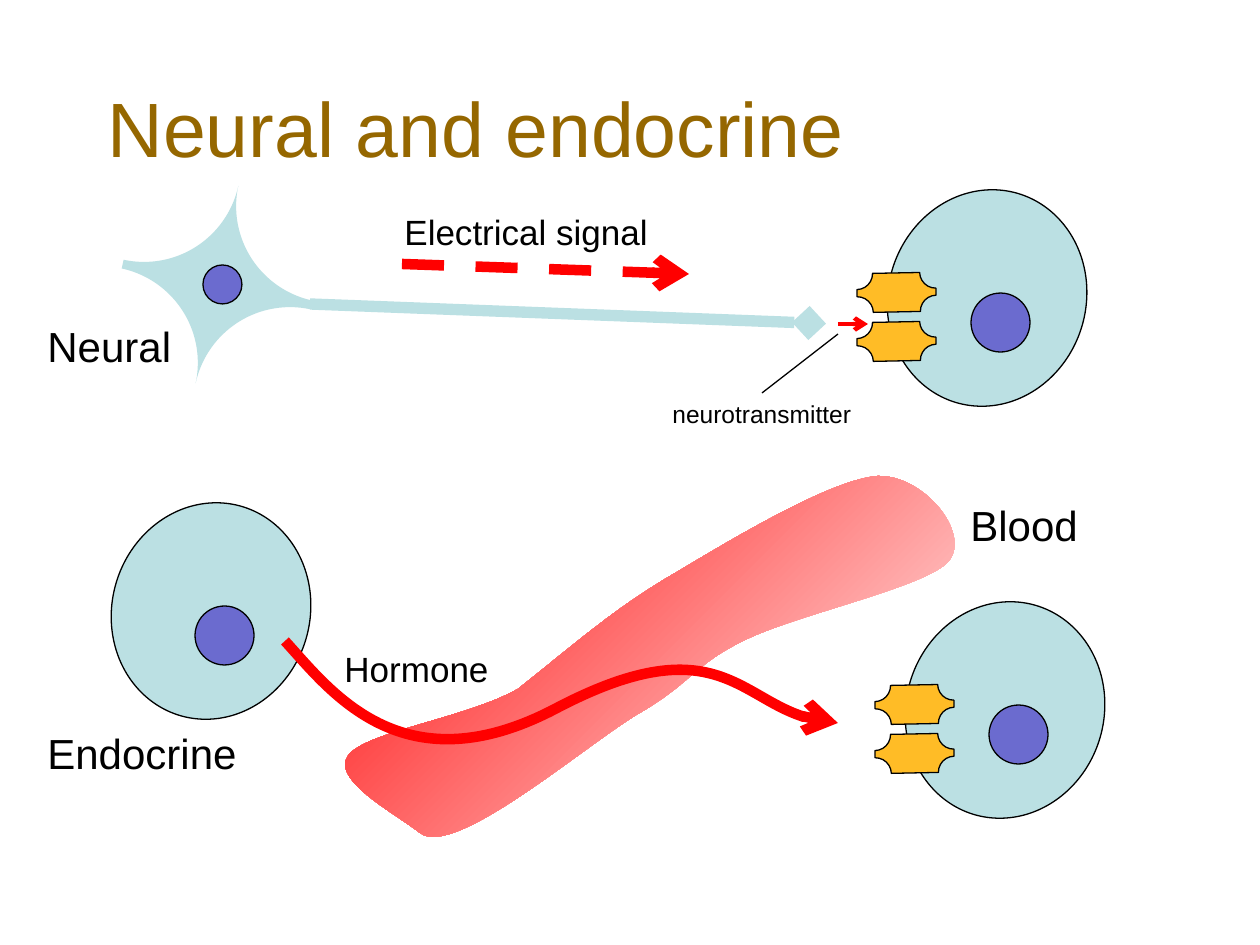
from dataclasses import dataclass

from lxml import etree
from pptx import Presentation
from pptx.dml.color import RGBColor
from pptx.enum import dml, shapes, text
from pptx.oxml import parse_xml
from pptx.oxml.ns import nsdecls, qn
from pptx.util import Pt

EMU_PER_PX = 914400 / 126


@dataclass(frozen=True)
class Theme:
    font: str = "Arial"
    title: str = "956700"
    ink: str = "000000"
    tissue: str = "BBE0E3"
    nucleus: str = "6B6BCF"
    receptor: str = "FFBC26"
    signal: str = "FF0000"
    fade: str = "FFFFFF"
    title_size: int = 44
    heading_size: int = 24
    label_size: int = 20
    note_size: int = 14
    outline: float = 0.75


THEME = Theme()


def px(*lengths):
    return [round(length * EMU_PER_PX) for length in lengths]


def rgb(color):
    return RGBColor.from_string(color)


# Text
def write(frame, words, size, color=THEME.ink):
    para = frame.paragraphs[0]
    span = para.add_run()
    span.text = words
    span.font.name = THEME.font
    span.font.size = Pt(size)
    span.font.color.rgb = rgb(color)
    return para


def add_title(page, words):
    title = page.shapes.title
    title.left, title.top, title.width, title.height = px(95, 53, 1071, 126)
    title.text_frame.vertical_anchor = text.MSO_ANCHOR.BOTTOM
    para = write(title.text_frame, words, THEME.title_size, THEME.title)
    para.alignment = text.PP_ALIGN.LEFT


def add_label(page, words, bounds, size):
    frame = page.shapes.add_textbox(*px(*bounds)).text_frame
    frame.word_wrap = False
    frame.auto_size = text.MSO_AUTO_SIZE.SHAPE_TO_FIT_TEXT
    write(frame, words, size)


# Preset shapes
def add_part(parent, kind, bounds, color, turn=0, corner=None, outlined=True):
    part = parent.shapes.add_shape(kind, *px(*bounds))
    part.shadow.inherit = False
    part.rotation = turn
    if corner is not None:
        part.adjustments[0] = corner
    part.fill.solid()
    part.fill.fore_color.rgb = rgb(color)
    if outlined:
        style_line(part.line, THEME.ink, THEME.outline)
    else:
        part.line.fill.background()


def add_cell(page, left, top, receptors=0):
    cell = page.shapes.add_group_shape()
    oval = shapes.MSO_SHAPE.OVAL
    add_part(cell, oval, (left, top, 218, 198), THEME.tissue, 106.4)
    add_part(cell, oval, (left + 93, top + 94, 59, 59), THEME.nucleus, 106.4)
    for index in range(receptors):
        bounds = (left - 1, top + 54 + 49 * index, 39, 79)
        add_part(cell, shapes.MSO_SHAPE.PLAQUE, bounds, THEME.receptor, 88.9, 0.409)


# Lines and curves
def style_line(line, color, width, dash=None, tail=None):
    line.color.rgb = rgb(color)
    line.width = Pt(width)
    if dash:
        line.dash_style = dash
    if tail:
        etree.SubElement(line._get_or_add_ln(), qn("a:tailEnd"), type=tail)


def add_line(page, start, end, color, width, **style):
    line = page.shapes.add_connector(
        shapes.MSO_CONNECTOR.STRAIGHT, *px(*start, *end))
    etree.SubElement(line.element.spPr, qn("a:effectLst"))
    style_line(line.line, color, width, **style)


def add_curve(page, start, controls, closed=False):
    """Draw cubic curves; every three controls make one segment."""
    builder = page.shapes.build_freeform(*start, scale=EMU_PER_PX)
    builder.add_line_segments(controls, close=closed)
    curve = builder.convert_to_shape()
    curve.shadow.inherit = False
    segments = curve.element.xpath(".//a:lnTo")
    for first in range(0, len(controls), 3):
        bezier = etree.Element(qn("a:cubicBezTo"))
        segments[first].addprevious(bezier)
        for segment in segments[first:first + 3]:
            bezier.append(segment[0])
            segment.getparent().remove(segment)
    return curve


def add_blood(page):
    vessel = add_curve(page, (348, 756), [
        (331, 780), (396, 814), (420, 833),
        (454, 859), (583, 747), (638, 714),
        (692, 683), (693, 665), (745, 640),
        (798, 614), (927, 587), (949, 561),
        (971, 533), (924, 475), (878, 476),
        (833, 479), (737, 536), (677, 572),
        (616, 607), (576, 643), (518, 689),
        (467, 718), (364, 732), (348, 756),
    ], closed=True)
    vessel.line.fill.background()
    gradient = parse_xml(
        f'<a:gradFill {nsdecls("a")} rotWithShape="1"><a:gsLst>'
        f'<a:gs pos="0"><a:srgbClr val="{THEME.signal}"/></a:gs>'
        f'<a:gs pos="100000"><a:srgbClr val="{THEME.fade}"/></a:gs></a:gsLst>'
        '<a:path path="circle"><a:fillToRect r="100000" b="100000"/></a:path>'
        '</a:gradFill>')
    vessel.element.spPr.find(qn("a:custGeom")).addnext(gradient)


def add_hormone(page):
    hormone = add_curve(page, (285, 641), [
        (330, 690), (402, 790), (557, 708),
        (712, 627), (752, 719), (838, 723),
    ])
    hormone.fill.background()
    style_line(hormone.line, THEME.signal, 6, tail="arrow")


def main():
    deck = Presentation()
    deck.slide_width, deck.slide_height = px(1260, 945)
    page = deck.slides.add_slide(deck.slide_layouts[5])
    add_title(page, "Neural and endocrine")

    # Neuron and the cells
    add_part(page, shapes.MSO_SHAPE.PLAQUE, (116, 188, 202, 193), THEME.tissue,
             282.2, 0.5, outlined=False)
    add_part(page, shapes.MSO_SHAPE.OVAL, (203, 265, 39, 39), THEME.nucleus)
    add_cell(page, 878, 199, receptors=2)
    add_cell(page, 896, 611, receptors=2)
    add_cell(page, 102, 512)

    # Axon, blood vessel and signals
    add_line(page, (310, 304), (809, 323), THEME.tissue, 6.5, tail="diamond")
    add_blood(page)
    add_line(page, (402, 264), (689, 274), THEME.signal, 6,
             dash=dml.MSO_LINE.DASH, tail="arrow")
    add_line(page, (838, 324), (868, 324), THEME.signal, 2.5, tail="arrow")
    add_hormone(page)

    # Labels
    add_label(page, "Neural", (35, 314, 150, 63), THEME.heading_size)
    add_label(page, "Endocrine", (35, 721, 217, 63), THEME.heading_size)
    add_label(page, "Electrical signal", (392, 204, 271, 55), THEME.label_size)
    add_label(page, "Hormone", (332, 641, 171, 55), THEME.label_size)
    add_label(page, "neurotransmitter", (660, 393, 205, 43), THEME.note_size)
    add_line(page, (762, 393), (838, 334), THEME.ink, THEME.outline)
    add_label(page, "Blood", (958, 493, 134, 63), THEME.heading_size)

    deck.save("out.pptx")


if __name__ == "__main__":
    main()
